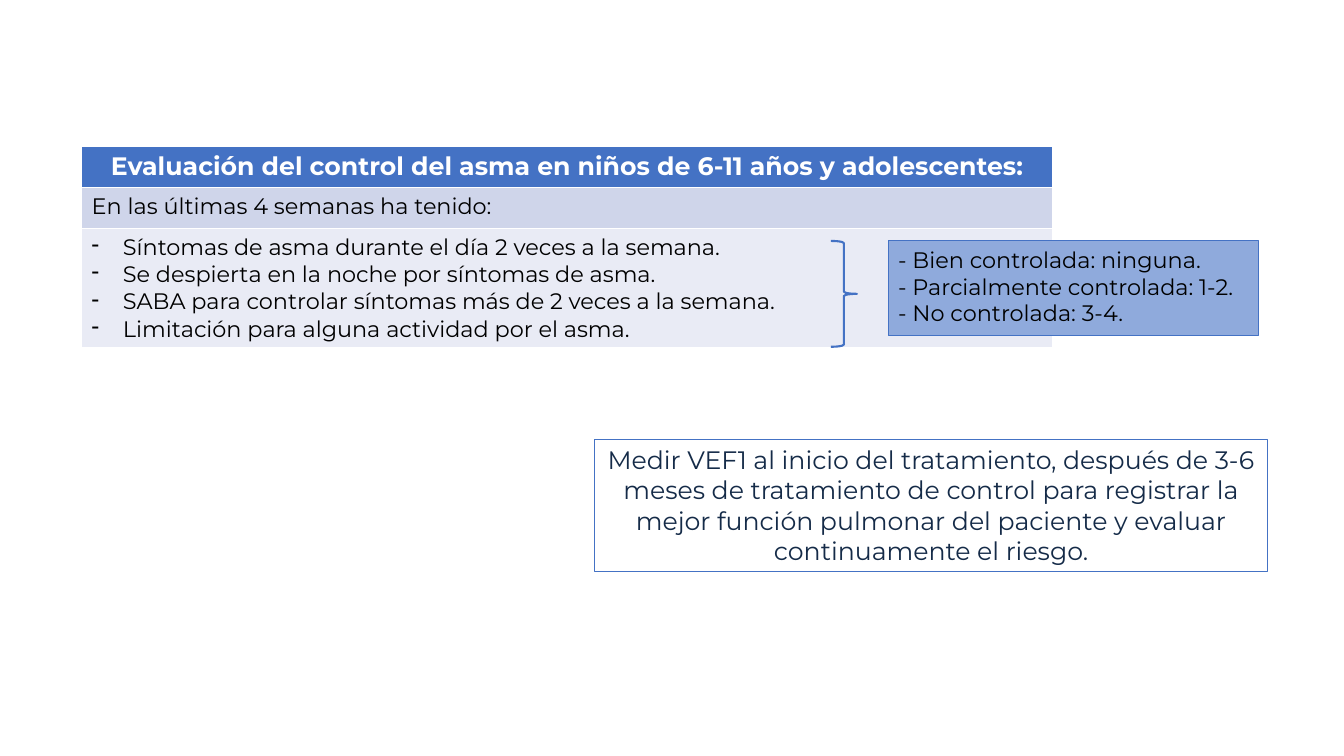
from pptx import Presentation
from pptx.dml.color import RGBColor
from pptx.enum.shapes import MSO_SHAPE
from pptx.enum.text import MSO_ANCHOR, PP_ALIGN
from pptx.oxml.xmlchemy import OxmlElement
from pptx.util import Inches, Pt

HEAD = "Evaluación del control del asma en niños de 6-11 años y adolescentes:"
LEAD = "En las últimas 4 semanas ha tenido:"
SIGNS = [
    "Síntomas de asma durante el día 2 veces a la semana.",
    "Se despierta en la noche por síntomas de asma.",
    "SABA para controlar síntomas más de 2 veces a la semana.",
    "Limitación para alguna actividad por el asma.",
]
LEVELS = [
    "- Bien controlada: ninguna.",
    "- Parcialmente controlada: 1-2.",
    "- No controlada: 3-4.",
]
NOTE = (
    "Medir VEF1 al inicio del tratamiento, después de 3-6 meses de tratamiento "
    "de control para registrar la mejor función pulmonar del paciente y evaluar "
    "continuamente el riesgo."
)
FONT, BLUE, BLACK = "Montserrat", "4472C4", "000000"
ROWS = [
    ([HEAD], 0.41, BLUE, dict(size=18, color="FFFFFF", bold=True, align=PP_ALIGN.CENTER)),
    ([LEAD], 0.41, "CFD5EA", dict(align=PP_ALIGN.JUSTIFY)),
    (SIGNS, 1.16, "E9EBF5", dict(align=PP_ALIGN.JUSTIFY, bullet="-")),
]


def paint(part, color):
    part.solid()
    part.fore_color.rgb = RGBColor.from_string(color)


def write(frame, lines, size=16, color=BLACK, bold=False, align=PP_ALIGN.LEFT, bullet=None):
    frame.word_wrap = True
    for i, line in enumerate(lines):
        para = frame.paragraphs[0] if i == 0 else frame.add_paragraph()
        para.alignment = align
        if bullet:
            props = para._p.get_or_add_pPr()
            props.set("marL", str(Inches(0.31)))
            props.set("indent", str(-Inches(0.31)))
            mark = OxmlElement("a:buChar")
            mark.set("char", bullet)
            props.append(mark)
        run = para.add_run()
        run.text = line
        run.font.name = FONT
        run.font.size = Pt(size)
        run.font.bold = bold
        run.font.color.rgb = RGBColor.from_string(color)


def draw(kind, area, width, fill=None):
    shape = slide.shapes.add_shape(kind, *map(Inches, area))
    shape.shadow.inherit = False
    if fill:
        paint(shape.fill, fill)
    else:
        shape.fill.background()
    paint(shape.line.fill, BLUE)
    shape.line.width = Pt(width)
    shape.text_frame.vertical_anchor = MSO_ANCHOR.TOP
    return shape


deck = Presentation()
deck.slide_width, deck.slide_height = Inches(13.33), Inches(7.5)
slide = deck.slides.add_slide(deck.slide_layouts[6])

tall = sum(row[1] for row in ROWS)
area = map(Inches, (0.81, 1.45, 9.63, tall))
table = slide.shapes.add_table(len(ROWS), 1, *area).table
for i, (lines, height, fill, style) in enumerate(ROWS):
    table.rows[i].height = Inches(height)
    cell = table.cell(i, 0)
    paint(cell.fill, fill)
    write(cell.text_frame, lines, **style)

note = draw(MSO_SHAPE.RECTANGLE, (5.9, 4.36, 6.67, 1.31), 0.75)
write(note.text_frame, [NOTE], size=18, color="152B48", align=PP_ALIGN.CENTER)
draw(MSO_SHAPE.RIGHT_BRACE, (8.24, 2.39, 0.26, 1.05), 1.5)
levels = draw(MSO_SHAPE.RECTANGLE, (8.81, 2.39, 3.67, 0.94), 0.75, "8FAADC")
write(levels.text_frame, LEVELS)

deck.save("out.pptx")
